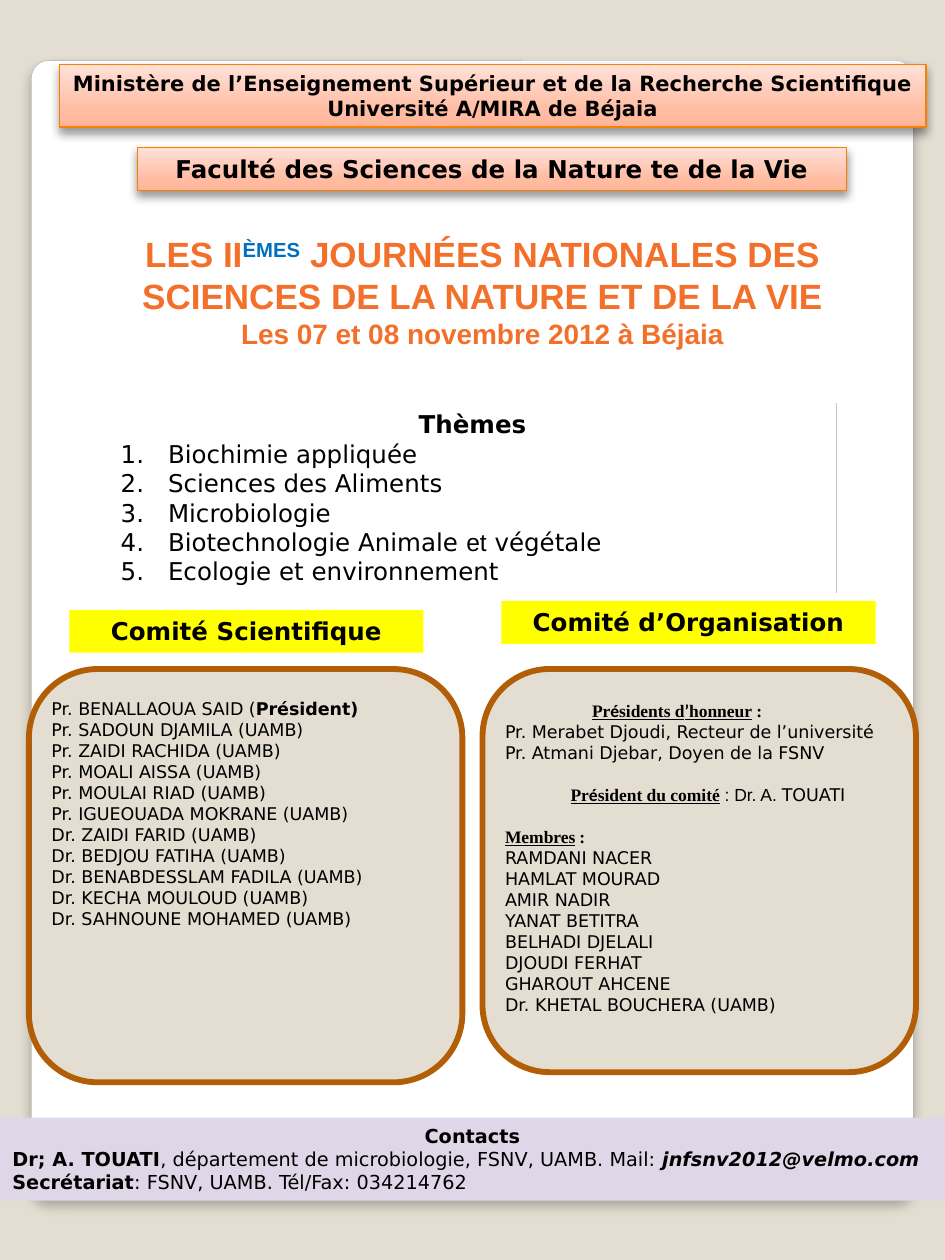
"""Build the poster of the national life-science days in Béjaia."""
from dataclasses import dataclass

from pptx import Presentation, util as u
from pptx.dml.color import RGBColor
from pptx.enum import shapes, text
from pptx.oxml import parse_xml
from pptx.oxml.ns import nsdecls

COLS, ROWS = 75, 100
WIDE, HIGH = u.Inches(7.5), u.Inches(10)
KIND = shapes.MSO_SHAPE
MID = text.PP_ALIGN.CENTER


@dataclass(frozen=True)
class Theme:
    """Hold the colours, fonts and type sizes."""
    back: str = "E3DED1"
    white: str = "FFFFFF"
    ink: str = "000000"
    head: str = "F2702A"
    blue: str = "0070C0"
    edge: str = "F97F00"
    brown: str = "B25E07"
    yellow: str = "FFFF00"
    lilac: str = "DFD7E7"
    grey: str = "A4A4A4"
    rule: str = "C4C4C4"
    peach: tuple = ((0, "FFB598"), (25, "FFBCA2"), (100, "FFE1D8"))
    paper: tuple = ((0, "FFFFFF"), (98, "FFFFFF"), (99, "F7F7F7"), (100, "DADADA"))
    sans: str = "DejaVu Sans"
    arial: str = "Arial"
    serif: str = "Times New Roman"
    soft: str = "Calibri"
    title: int = 20
    date: int = 16
    large: int = 14
    mid: int = 12
    note: int = 11
    small: int = 10


T = Theme()
BOLD = {"bold": True}
MARK = {"bold": True, "name": T.serif}
UNDER = {**MARK, "underline": True}
ACCENT = {**UNDER, "name": T.soft}
PEOPLE = """Pr. SADOUN DJAMILA (UAMB)
Pr. ZAIDI RACHIDA (UAMB)
Pr. MOALI AISSA (UAMB)
Pr. MOULAI RIAD (UAMB)
Pr. IGUEOUADA MOKRANE (UAMB)
Dr. ZAIDI FARID (UAMB)
Dr. BEDJOU FATIHA (UAMB)
Dr. BENABDESSLAM FADILA (UAMB)
Dr. KECHA MOULOUD (UAMB)
Dr. SAHNOUNE MOHAMED (UAMB)""".split("\n")
TEAM = """RAMDANI NACER
HAMLAT MOURAD
AMIR NADIR
YANAT BETITRA
BELHADI DJELALI
DJOUDI FERHAT
GHAROUT AHCENE
Dr. KHETAL BOUCHERA (UAMB)""".split("\n")


def tint(code):
    """Turn a hex code into a colour."""
    return RGBColor.from_string(code)


def place(col, row, wide, high):
    """Turn grid cells into slide lengths."""
    return (round(WIDE * col / COLS), round(HIGH * row / ROWS),
            round(WIDE * wide / COLS), round(HIGH * high / ROWS))


def shade(shape, stops, turn):
    """Fill a shape with a linear gradient."""
    marks = "".join(f'<a:gs pos="{at * 1000}"><a:srgbClr val="{code}"/></a:gs>'
                    for at, code in stops)
    shape._element.spPr.insert(2, parse_xml(
        f'<a:gradFill {nsdecls("a")} rotWithShape="1"><a:gsLst>{marks}</a:gsLst>'
        f'<a:lin ang="{turn * 60000}" scaled="0"/></a:gradFill>'))


def cast(shape, alpha, blur, drop):
    """Give a shape a soft shadow below it."""
    shape._element.spPr.find(".//{*}effectLst").append(parse_xml(
        f'<a:outerShdw {nsdecls("a")} blurRad="{u.Pt(blur)}" dist="{u.Pt(drop)}" '
        f'dir="5400000" rotWithShape="0"><a:srgbClr val="{T.ink}">'
        f'<a:alpha val="{alpha * 1000}"/></a:srgbClr></a:outerShdw>'))


def block(slide, cells, fill=None, line=None, width=0, kind=KIND.RECTANGLE):
    """Draw a preset shape on the grid."""
    shape = slide.shapes.add_shape(kind, *place(*cells))
    shape.shadow.inherit = False
    if fill:
        shape.fill.solid()
        shape.fill.fore_color.rgb = tint(fill)
    if line:
        shape.line.color.rgb = tint(line)
        shape.line.width = u.Pt(width)
    else:
        shape.line.fill.background()
    return shape


def label(slide, cells):
    """Add an empty text box on the grid."""
    return slide.shapes.add_textbox(*place(*cells))


def para(frame, parts, size, align=text.PP_ALIGN.LEFT, gap=0, shift=0, count=False):
    """Write one paragraph of plain or styled runs."""
    first = not frame.paragraphs[0].runs
    line = frame.paragraphs[0] if first else frame.add_paragraph()
    line.alignment = align
    if gap:
        line.space_before = u.Pt(gap)
    props = line._p.get_or_add_pPr()
    if shift:
        props.set("marL", str(place(shift, 0, 0, 0)[0]))
    if count:
        props.set("indent", str(-place(shift, 0, 0, 0)[0]))
        props.append(parse_xml(f'<a:buFont {nsdecls("a")} typeface="+mj-lt"/>'))
        props.append(parse_xml(f'<a:buAutoNum {nsdecls("a")} type="arabicPeriod"/>'))
    for words, style in [(parts, {})] if isinstance(parts, str) else parts:
        run = line.add_run()
        run.text = words
        look = {"name": T.sans, "bold": False, "color": T.ink, **style}
        run.font.size = u.Pt(size)
        run.font.color.rgb = tint(look.pop("color"))
        lift = look.pop("lift", 0)
        if lift:
            run.font._element.set("baseline", str(lift * 1000))
        for key, value in look.items():
            setattr(run.font, key, value)


def frame(shape, top=0.5):
    """Set up the text frame of a shape."""
    body = shape.text_frame
    body.word_wrap = True
    body.vertical_anchor = text.MSO_ANCHOR.TOP
    body.margin_top = place(0, top, 0, 0)[1]
    return body


def banner(slide, cells, lines, size):
    """Draw a peach banner with bold lines."""
    shape = block(slide, cells, line=T.edge, width=0.75)
    shade(shape, T.peach, 270)
    cast(shape, 40, 5.2, 3)
    body = frame(shape)
    for words in lines:
        para(body, [(words, BOLD)], size, MID)


def card(slide):
    """Draw the white sheet behind the poster."""
    shape = block(slide, (2.5, 4.8, 70, 90.4), line=T.grey, width=0.16,
                  kind=KIND.ROUNDED_RECTANGLE)
    shape.adjustments[0] = 0.02
    shade(shape, T.paper, 90)
    cast(shape, 25, 6, 4)


def title(slide):
    """Write the title and the date."""
    body = frame(label(slide, (8.6, 18, 59.4, 10.4)))
    look = {"name": T.arial, "bold": True, "color": T.head}
    para(body, [("LES II", look), ("ÈMES", {**look, "color": T.blue, "lift": 30}),
                (" JOURNÉES NATIONALES DES SCIENCES DE LA NATURE ET DE LA VIE", look)],
         T.title, MID)
    para(body, [("Les 07 et 08 novembre 2012 à Béjaia", look)], T.date, MID)


def topics(slide):
    """List the numbered themes beside a thin rule."""
    body = frame(block(slide, (8.6, 32, 57.8, 15.1), T.white))
    para(body, [("Thèmes", BOLD)], T.large, MID)
    mixed = [("Biotechnologie Animale ", {}), ("et", {"name": T.arial}), (" végétale", {})]
    for parts in ("Biochimie appliquée", "Sciences des Aliments", "Microbiologie",
                  mixed, "Ecologie et environnement"):
        para(body, parts, T.large, shift=3.75, count=True)
    left, top, wide, high = place(66.4, 32, 0, 15.1)
    rule = slide.shapes.add_connector(shapes.MSO_CONNECTOR.STRAIGHT,
                                      left, top, left + wide, top + high)
    rule.line.color.rgb = tint(T.rule)
    rule.line.width = u.Pt(0.5)
    rule._element.spPr.append(parse_xml(f'<a:effectLst {nsdecls("a")}/>'))


def panels(slide):
    """Draw the two committee panels and their headings."""
    for col, high in ((2.3, 32.8), (38.3, 32)):
        block(slide, (col, 53.1, 34.4, high), T.back, T.brown, 3.35,
              KIND.ROUNDED_RECTANGLE)
    for cells, words in (((5.5, 48.4, 28.1, 3.4), "Comité Scientifique"),
                         ((39.8, 47.7, 29.7, 3.4), "Comité d’Organisation")):
        para(frame(block(slide, cells, T.yellow)), [(words, BOLD)], T.large, MID)


def science(slide):
    """List the scientific committee."""
    body = frame(label(slide, (3.1, 54.9, 32.8, 19.5)))
    para(body, [("Pr. BENALLAOUA SAID (", {}), ("Président)", BOLD)], T.small)
    for words in PEOPLE:
        para(body, words, T.small)


def staff(slide):
    """List the organising committee."""
    body = frame(label(slide, (39.1, 53.4, 32.8, 27.9)), 2.15)
    para(body, [("Pr", UNDER), ("é", ACCENT), ("sidents d", UNDER), ("’", ACCENT),
                ("honneur", UNDER), (" :", MARK)], T.small, shift=6.9)
    para(body, "Pr. Merabet Djoudi, Recteur de l’université", T.small)
    para(body, "Pr. Atmani Djebar, Doyen de la FSNV", T.small)
    para(body, [("Pr", UNDER), ("é", ACCENT), ("sident du comité", UNDER),
                (" : Dr. A. ", {"name": T.arial}), ("TOUATI", {})],
         T.small, gap=12, shift=5.2)
    para(body, [("Membres", UNDER), (" ", {**MARK, "name": T.soft}), (":", MARK)],
         T.small, gap=12)
    for words in TEAM:
        para(body, words, T.small)


def contact(slide):
    """Write the contact strip."""
    body = frame(block(slide, (0, 88.7, 75, 6.6), T.lilac))
    para(body, [("Contacts", BOLD)], T.note, MID)
    para(body, [("Dr; A. TOUATI", BOLD),
                (", département de microbiologie, FSNV, UAMB. Mail: ", {}),
                ("jnfsnv2012@velmo.com", {"bold": True, "italic": True})], T.note)
    para(body, [("Secrétariat", BOLD), (": FSNV, UAMB. Tél/Fax: 034214762", {})], T.note)


def main():
    """Build and save the poster."""
    deck = Presentation()
    deck.slide_width, deck.slide_height = WIDE, HIGH
    slide = deck.slides.add_slide(deck.slide_layouts[6])
    slide.background.fill.solid()
    slide.background.fill.fore_color.rgb = tint(T.back)
    card(slide)
    banner(slide, (10.9, 11.7, 56.3, 3.4),
           ["Faculté des Sciences de la Nature te de la Vie"], T.large)
    for draw in (title, topics, panels, science, staff, contact):
        draw(slide)
    banner(slide, (4.7, 5.1, 68.8, 5),
           ["Ministère de l’Enseignement Supérieur et de la Recherche Scientifique",
            "Université A/MIRA de Béjaia"], T.mid)
    deck.save("out.pptx")


if __name__ == "__main__":
    main()
